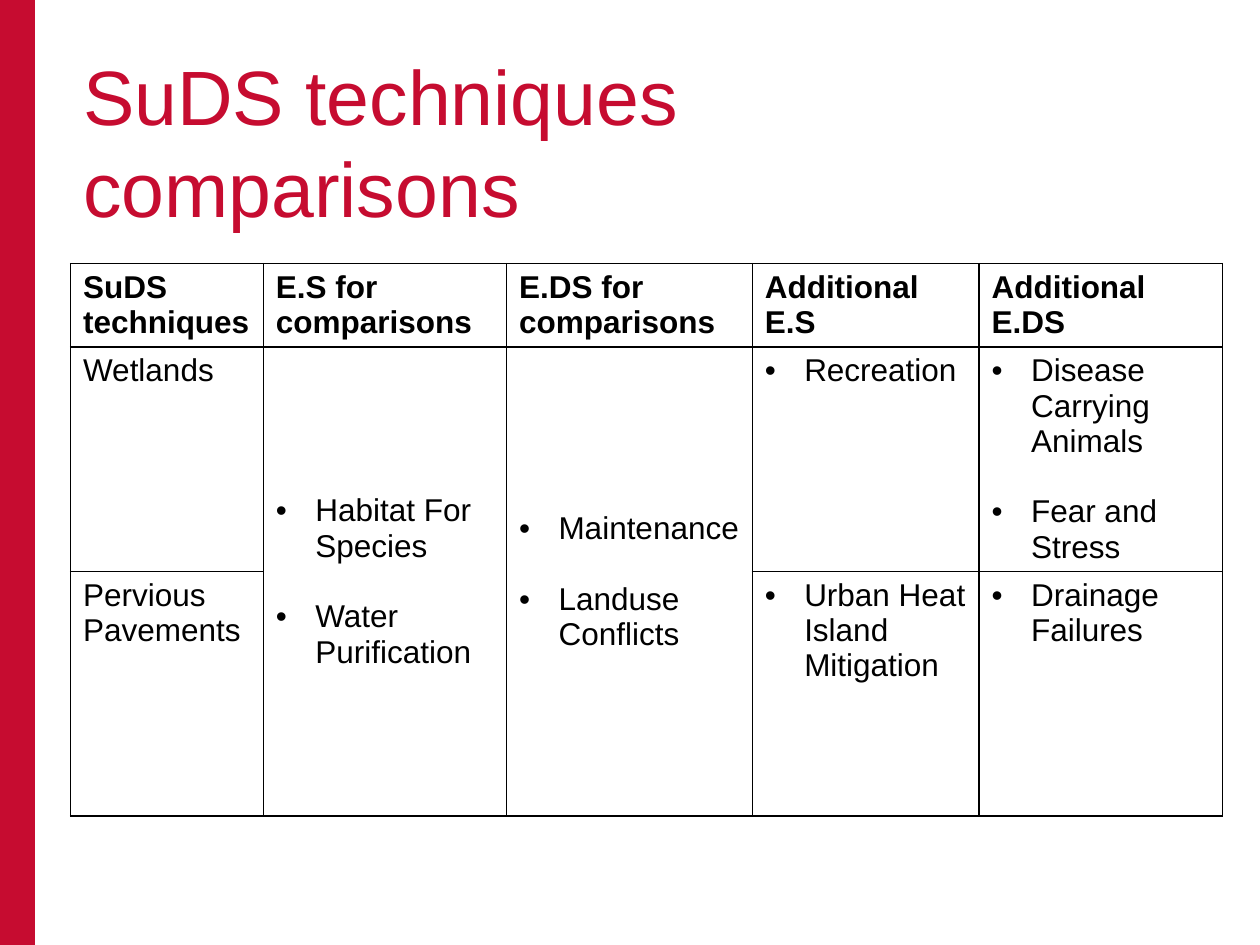
import pptx
import pptx.dml.color
import pptx.enum.shapes
import pptx.enum.text
import pptx.oxml.ns
import pptx.util
from lxml import etree

Pt = pptx.util.Pt
MIDDLE = pptx.enum.text.MSO_ANCHOR.MIDDLE
TOP = pptx.enum.text.MSO_ANCHOR.TOP

COLOURS = {"accent": "C60C30", "text": "000000", "border": "000000", "cell": "FFFFFF"}
PAGE_WIDTH, PAGE_HEIGHT = 720, 540
LEFT = 40.3
COLUMN_WIDTHS = [110.2, 139, 140.4, 129.6, 139]
ROW_HEIGHTS = [47.5, 128, 140]

HEADINGS = ["SuDS techniques", "E.S for comparisons", "E.DS for comparisons",
            "Additional E.S", "Additional E.DS"]
# A string is plain text, a list is bulleted, None is covered by the merged cell above.
TECHNIQUES = [
    ["Wetlands", ["Habitat For Species", "Water Purification"],
     ["Maintenance", "Landuse Conflicts"], ["Recreation"],
     ["Disease Carrying Animals", "Fear and Stress"]],
    ["Pervious Pavements", None, None, ["Urban Heat Island Mitigation"],
     ["Drainage Failures"]],
]


def colour(name):
    return pptx.dml.color.RGBColor.from_string(COLOURS[name])


class SlideBuilder:
    """Holds the text style and the current page."""

    font_name = "Arial"
    title_size = 44
    table_size = 18
    bullet_indent = 22.5
    bullet_gap = 20.2
    border_width = 1

    def __init__(self, page):
        self.page = page

    def style(self, para, size, colour_name, bold=False):
        para.font.name = self.font_name
        para.font.size = Pt(size)
        para.font.bold = bold
        para.font.color.rgb = colour(colour_name)

    def side_bar(self, width):
        bar = self.page.shapes.add_shape(
            pptx.enum.shapes.MSO_SHAPE.RECTANGLE, 0, 0, Pt(width), Pt(PAGE_HEIGHT))
        bar.shadow.inherit = False
        bar.fill.solid()
        bar.fill.fore_color.rgb = colour("accent")
        bar.line.fill.background()

    def title(self, text, left, top, width, height):
        box = self.page.shapes.title
        box.left, box.top, box.width, box.height = map(Pt, (left, top, width, height))
        frame = box.text_frame
        frame.text = text
        frame.word_wrap = True
        frame.auto_size = pptx.enum.text.MSO_AUTO_SIZE.NONE
        frame.vertical_anchor = MIDDLE
        para = frame.paragraphs[0]
        para.alignment = pptx.enum.text.PP_ALIGN.LEFT
        self.style(para, self.title_size, "accent")

    def bullet(self, para):
        properties = para._p.get_or_add_pPr()
        properties.set("marL", str(Pt(self.bullet_indent)))
        properties.set("indent", str(-Pt(self.bullet_indent)))
        qn = pptx.oxml.ns.qn
        etree.SubElement(properties, qn("a:buFont")).set("typeface", self.font_name)
        etree.SubElement(properties, qn("a:buChar")).set("char", "•")

    def borders(self, cell):
        qn = pptx.oxml.ns.qn
        properties = cell._tc.get_or_add_tcPr()
        for side in ("lnL", "lnR", "lnT", "lnB"):
            line = etree.SubElement(properties, qn(f"a:{side}"), w=str(Pt(self.border_width)))
            fill = etree.SubElement(line, qn("a:solidFill"))
            etree.SubElement(fill, qn("a:srgbClr"), val=COLOURS["border"])

    def write_cell(self, cell, content, bold):
        bulleted = isinstance(content, list)
        frame = cell.text_frame
        for index, text in enumerate(content if bulleted else [content]):
            para = frame.add_paragraph() if index else frame.paragraphs[0]
            para.text = text
            if index:
                para.space_before = Pt(self.bullet_gap)
            if bulleted:
                self.bullet(para)
            self.style(para, self.table_size, "text", bold)

    def table(self, rows, left, top):
        grid = self.page.shapes.add_table(
            len(rows), len(COLUMN_WIDTHS), Pt(left), Pt(top),
            Pt(sum(COLUMN_WIDTHS)), Pt(sum(ROW_HEIGHTS))).table
        grid.first_row = grid.horz_banding = False
        for column, width in zip(grid.columns, COLUMN_WIDTHS):
            column.width = Pt(width)
        for row, height in zip(grid.rows, ROW_HEIGHTS):
            row.height = Pt(height)
        for row_index, row in enumerate(rows):
            for column_index, content in enumerate(row):
                cell = grid.cell(row_index, column_index)
                self.borders(cell)
                cell.fill.solid()
                cell.fill.fore_color.rgb = colour("cell")
                if content is None:
                    above = grid.cell(row_index - 1, column_index)
                    above.merge(cell)
                    above.vertical_anchor = MIDDLE
                else:
                    cell.vertical_anchor = TOP
                    self.write_cell(cell, content, bold=row_index == 0)


def main():
    deck = pptx.Presentation()
    deck.slide_width, deck.slide_height = Pt(PAGE_WIDTH), Pt(PAGE_HEIGHT)
    title_only = deck.slide_layouts[5]
    builder = SlideBuilder(deck.slides.add_slide(title_only))
    builder.side_bar(20)
    builder.title("SuDS techniques comparisons", LEFT, 24, 513, 113)
    builder.table([HEADINGS] + TECHNIQUES, LEFT, 150.7)
    deck.save("out.pptx")


if __name__ == "__main__":
    main()
